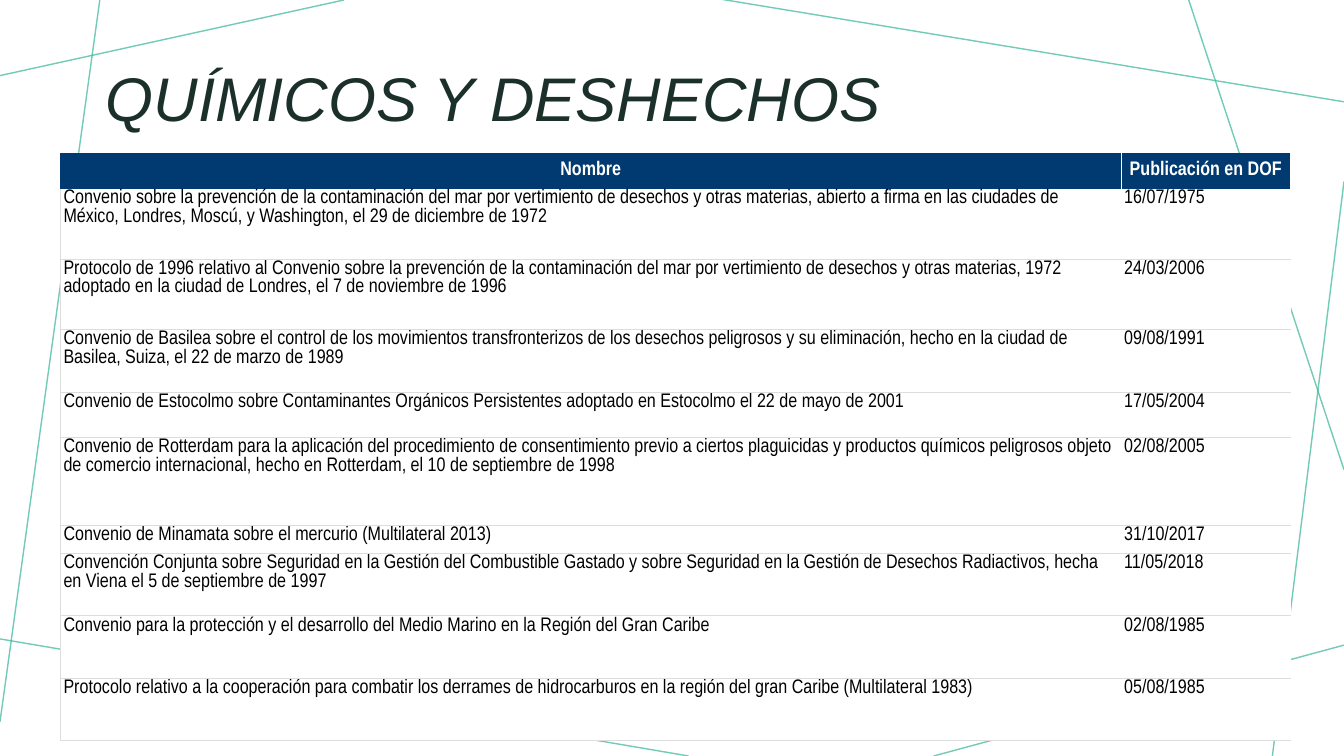
from lxml import etree
from pptx import Presentation
from pptx.dml.color import RGBColor
from pptx.enum.shapes import MSO_CONNECTOR
from pptx.enum.text import MSO_ANCHOR, MSO_AUTO_SIZE, PP_ALIGN
from pptx.oxml.ns import qn
from pptx.util import Inches, Pt

GREEN = RGBColor(0x37, 0xB5, 0x98)
DARK_GREEN = RGBColor(0x1B, 0x30, 0x2B)
NAVY = RGBColor(0x00, 0x3A, 0x70)
GRAY = RGBColor(0xDD, 0xDD, 0xDD)
WHITE = RGBColor(0xFF, 0xFF, 0xFF)
BLACK = RGBColor(0x00, 0x00, 0x00)
PLAIN_TABLE_STYLE = "{2D5ABB26-0587-4C30-8999-92F81FD0307C}"

BACKGROUND_LINES = [
    (3.41, 0, 0, 0.75),
    (0.99, 0, 0, 7.16),
    (6.83, 7.5, -0.05, 6.33),
    (13.33, 6.4, 9.26, 7.5),
    (13.33, 1.8, 12.62, 7.5),
    (13.33, 4.66, 11.79, 0),
    (13.33, 1.01, 7.14, -0.01),
]

# Row height, name, publication date
TREATIES = [
    (0.35, "Nombre", "Publicación en DOF"),
    (0.7, "Convenio sobre la prevención de la contaminación del mar por vertimiento de desechos y otras materias, "
     "abierto a firma en las ciudades de México, Londres, Moscú, y Washington, el 29 de diciembre de 1972",
     "16/07/1975"),
    (0.7, "Protocolo de 1996 relativo al Convenio sobre la prevención de la contaminación del mar por vertimiento "
     "de desechos y otras materias, 1972 adoptado en la ciudad de Londres, el 7 de noviembre de 1996",
     "24/03/2006"),
    (0.62, "Convenio de Basilea sobre el control de los movimientos transfronterizos de los desechos peligrosos "
     "y su eliminación, hecho en la ciudad de Basilea, Suiza, el 22 de marzo de 1989", "09/08/1991"),
    (0.45, "Convenio de Estocolmo sobre Contaminantes Orgánicos Persistentes adoptado en Estocolmo "
     "el 22 de mayo de 2001", "17/05/2004"),
    (0.87, "Convenio de Rotterdam para la aplicación del procedimiento de consentimiento previo a ciertos "
     "plaguicidas y productos químicos peligrosos objeto de comercio internacional, hecho en Rotterdam, "
     "el 10 de septiembre de 1998", "02/08/2005"),
    (0.28, "Convenio de Minamata sobre el mercurio (Multilateral 2013)", "31/10/2017"),
    (0.62, "Convención Conjunta sobre Seguridad en la Gestión del Combustible Gastado y sobre Seguridad en la "
     "Gestión de Desechos Radiactivos, hecha en Viena el 5 de septiembre de 1997", "11/05/2018"),
    (0.62, "Convenio para la protección y el desarrollo del Medio Marino en la Región del Gran Caribe",
     "02/08/1985"),
    (0.62, "Protocolo relativo a la cooperación para combatir los derrames de hidrocarburos en la región "
     "del gran Caribe (Multilateral 1983)", "05/08/1985"),
]


def add_border(cell, side, color):
    """Draw one cell edge; call in the order lnL, lnR, lnT, lnB and before the fill."""
    properties = cell._tc.get_or_add_tcPr()
    line = etree.SubElement(properties, qn(f"a:{side}"), w=str(Pt(0.75)))
    fill = etree.SubElement(line, qn("a:solidFill"))
    etree.SubElement(fill, qn("a:srgbClr"), val=str(color))


presentation = Presentation()
presentation.slide_width = Inches(13.33)
presentation.slide_height = Inches(7.5)
slide = presentation.slides.add_slide(presentation.slide_layouts[5])

for ends in BACKGROUND_LINES:
    connector = slide.shapes.add_connector(MSO_CONNECTOR.STRAIGHT, *map(Inches, ends))
    connector.line.width = Pt(1)
    connector.line.color.rgb = GREEN
    shape_properties = connector._element.spPr
    color_element = shape_properties.find(".//" + qn("a:srgbClr"))
    etree.SubElement(color_element, qn("a:alpha"), val="70000")
    etree.SubElement(shape_properties, qn("a:effectLst"))

title = slide.shapes.title
slide.shapes._spTree.append(title._element)  # in front of the lines
title.left, title.top = Inches(0.95), Inches(0.49)
title.width, title.height = Inches(10.83), Inches(1.03)
title.text_frame.text = "QUÍMICOS Y DESHECHOS"
title.text_frame.auto_size = MSO_AUTO_SIZE.NONE
title.text_frame.vertical_anchor = MSO_ANCHOR.MIDDLE
paragraph = title.text_frame.paragraphs[0]
paragraph.alignment = PP_ALIGN.LEFT
paragraph.line_spacing = 0.9
paragraph.font.name = "Arial"
paragraph.font.size = Pt(44)
paragraph.font.italic = True
paragraph.font.color.rgb = DARK_GREEN

table_frame = slide.shapes.add_table(
    len(TREATIES), 2, Inches(0.6), Inches(1.52), Inches(12.2), Inches(5.83))
table = table_frame.table
table.horz_banding = False
table._tbl.tblPr.find(qn("a:tableStyleId")).text = PLAIN_TABLE_STYLE
table.columns[0].width = Inches(10.52)
table.columns[1].width = Inches(1.68)

for row_index, (height, *texts) in enumerate(TREATIES):
    table.rows[row_index].height = Inches(height)
    is_header = row_index == 0
    for column_index, text in enumerate(texts):
        cell = table.cell(row_index, column_index)
        cell.text = text
        cell.margin_left = cell.margin_right = Inches(0.03)
        cell.margin_top = cell.margin_bottom = Inches(0.01)
        cell.vertical_anchor = MSO_ANCHOR.MIDDLE if is_header else MSO_ANCHOR.TOP
        if is_header:
            if column_index == 1:
                add_border(cell, "lnL", WHITE)
            add_border(cell, "lnR", WHITE)
        else:
            if column_index == 0:
                add_border(cell, "lnL", GRAY)
            if row_index > 1:
                add_border(cell, "lnT", GRAY)
            add_border(cell, "lnB", GRAY)
        cell.fill.solid()
        cell.fill.fore_color.rgb = NAVY if is_header else WHITE
        paragraph = cell.text_frame.paragraphs[0]
        paragraph.alignment = PP_ALIGN.CENTER if is_header else PP_ALIGN.LEFT
        paragraph.font.name = "Arial Narrow"
        paragraph.font.size = Pt(14)
        paragraph.font.bold = is_header
        paragraph.font.color.rgb = WHITE if is_header else BLACK

presentation.save("out.pptx")
